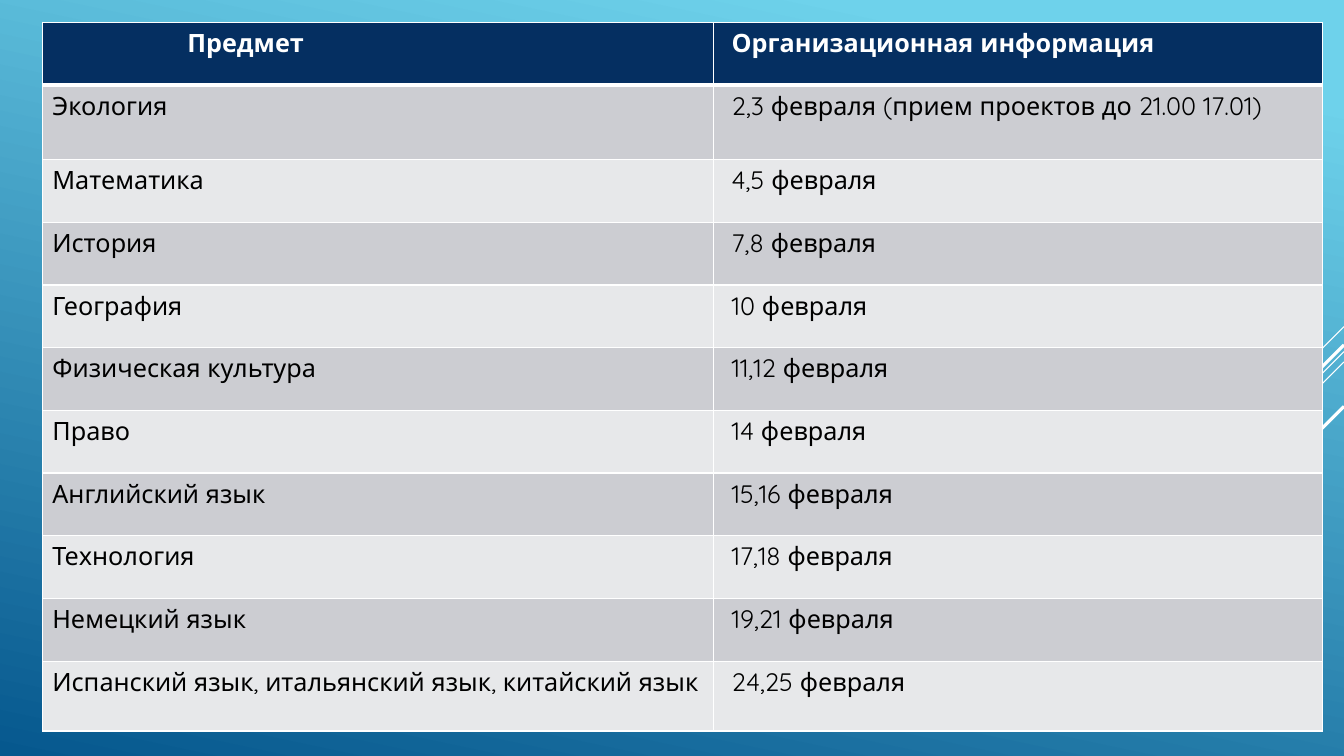
from dataclasses import dataclass

from lxml.etree import SubElement
from pptx import Presentation
from pptx.dml.color import RGBColor
from pptx.enum.shapes import MSO_CONNECTOR
from pptx.oxml.ns import qn
from pptx.slide import Slide
from pptx.table import _Cell
from pptx.util import Cm, Pt

WHITE = RGBColor(0xFF, 0xFF, 0xFF)
BLACK = RGBColor(0x00, 0x00, 0x00)
NAVY = RGBColor(0x05, 0x2F, 0x61)
DARK_BAND = RGBColor(0xCC, 0xCD, 0xD2)
LIGHT_BAND = RGBColor(0xE7, 0xE8, 0xEA)
SKY = RGBColor(0x6E, 0xD2, 0xEB)
OCEAN = RGBColor(0x06, 0x58, 0x8E)

FONT = "Quicksand"
SLIDE_WIDTH, SLIDE_HEIGHT = 33.87, 19.05
COLUMN_WIDTHS = (16.92, 15.34)
HEADER_HEIGHT, FIRST_HEIGHT, ROW_HEIGHT, LAST_HEIGHT = 1.58, 1.88, 1.58, 1.76
SUBJECT_INDENT, HEADER_INDENT, DATE_INDENT = 0.25, 3.65, 0.45


@dataclass(frozen=True)
class Ray:
    """A diagonal line running down and left from the right slide edge, in cm."""

    top: float
    reach: float
    weight: float


@dataclass(frozen=True)
class Exam:
    """A subject and its dates."""

    subject: str
    dates: str


RAYS = (
    Ray(8.23, 2.54, 0.75),
    Ray(8.86, 8.28, 0.75),
    Ray(9.12, 5.26, 0.75),
    Ray(8.69, 4.85, 2.25),
    Ray(10.24, 3.53, 2.25),
)

HEADER = Exam("Предмет", "Организационная информация")
EXAMS = (
    Exam("Экология", "2,3 февраля (прием проектов до 21.00 17.01)"),
    Exam("Математика", "4,5 февраля"),
    Exam("История", "7,8 февраля"),
    Exam("География", "10 февраля"),
    Exam("Физическая культура", "11,12 февраля"),
    Exam("Право", "14 февраля"),
    Exam("Английский язык", "15,16 февраля"),
    Exam("Технология", "17,18 февраля"),
    Exam("Немецкий язык", "19,21 февраля"),
    Exam("Испанский язык, итальянский язык, китайский язык", "24,25 февраля"),
)


def paint_background(slide: Slide) -> None:
    """Fill the slide with a slanted blue gradient."""
    fill = slide.background.fill
    fill.gradient()
    fill.gradient_angle = 258
    for stop, color, position in zip(fill.gradient_stops, (SKY, OCEAN), (0.1, 1.0)):
        stop.color.rgb = color
        stop.position = position


def draw_ray(slide: Slide, ray: Ray) -> None:
    """Draw one white diagonal line."""
    connector = slide.shapes.add_connector(
        MSO_CONNECTOR.STRAIGHT,
        Cm(SLIDE_WIDTH),
        Cm(ray.top),
        Cm(SLIDE_WIDTH - ray.reach),
        Cm(ray.top + ray.reach),
    )
    connector.line.color.rgb = WHITE
    connector.line.width = Pt(ray.weight)
    SubElement(connector._element.spPr, qn("a:effectLst"))


def set_borders(cell: _Cell, *, top: float = 1, bottom: float = 1) -> None:
    """Give a cell white borders, with widths in points."""
    properties = cell._tc.get_or_add_tcPr()
    for side, width in (("L", 1), ("R", 1), ("T", top), ("B", bottom)):
        border = SubElement(properties, qn(f"a:ln{side}"), w=str(Pt(width)))
        fill = SubElement(border, qn("a:solidFill"))
        SubElement(fill, qn("a:srgbClr"), val=str(WHITE))


def write_cell(
    cell: _Cell, text: str, *, color: RGBColor, bold: bool, indent: float
) -> None:
    """Write formatted text in a cell."""
    cell.margin_left = Cm(indent)
    run = cell.text_frame.paragraphs[0].add_run()
    run.text = text
    run.font.name = FONT
    run.font.size = Pt(18)
    run.font.bold = bold
    run.font.color.rgb = color


def draw_schedule(slide: Slide) -> None:
    """Draw the table of subjects and dates."""
    middle_heights = [ROW_HEIGHT] * (len(EXAMS) - 2)
    heights = [HEADER_HEIGHT, FIRST_HEIGHT, *middle_heights, LAST_HEIGHT]
    table = slide.shapes.add_table(
        len(heights),
        len(COLUMN_WIDTHS),
        Cm(1.07),
        Cm(0.56),
        Cm(sum(COLUMN_WIDTHS)),
        Cm(sum(heights)),
    ).table
    for column, width in zip(table.columns, COLUMN_WIDTHS):
        column.width = Cm(width)
    for index, (exam, height) in enumerate(zip((HEADER, *EXAMS), heights)):
        table.rows[index].height = Cm(height)
        is_header = index == 0
        band = NAVY if is_header else DARK_BAND if index % 2 else LIGHT_BAND
        subject_indent = HEADER_INDENT if is_header else SUBJECT_INDENT
        texts = ((exam.subject, subject_indent), (exam.dates, DATE_INDENT))
        for column_index, (text, indent) in enumerate(texts):
            cell = table.cell(index, column_index)
            set_borders(
                cell, top=3 if index == 1 else 1, bottom=3 if is_header else 1
            )
            cell.fill.solid()
            cell.fill.fore_color.rgb = band
            write_cell(
                cell,
                text,
                color=WHITE if is_header else BLACK,
                bold=is_header,
                indent=indent,
            )


def main() -> None:
    """Build and save the presentation."""
    presentation = Presentation()
    presentation.slide_width = Cm(SLIDE_WIDTH)
    presentation.slide_height = Cm(SLIDE_HEIGHT)
    slide = presentation.slides.add_slide(presentation.slide_layouts[6])
    paint_background(slide)
    for ray in RAYS:
        draw_ray(slide, ray)
    draw_schedule(slide)
    presentation.save("out.pptx")


if __name__ == "__main__":
    main()
